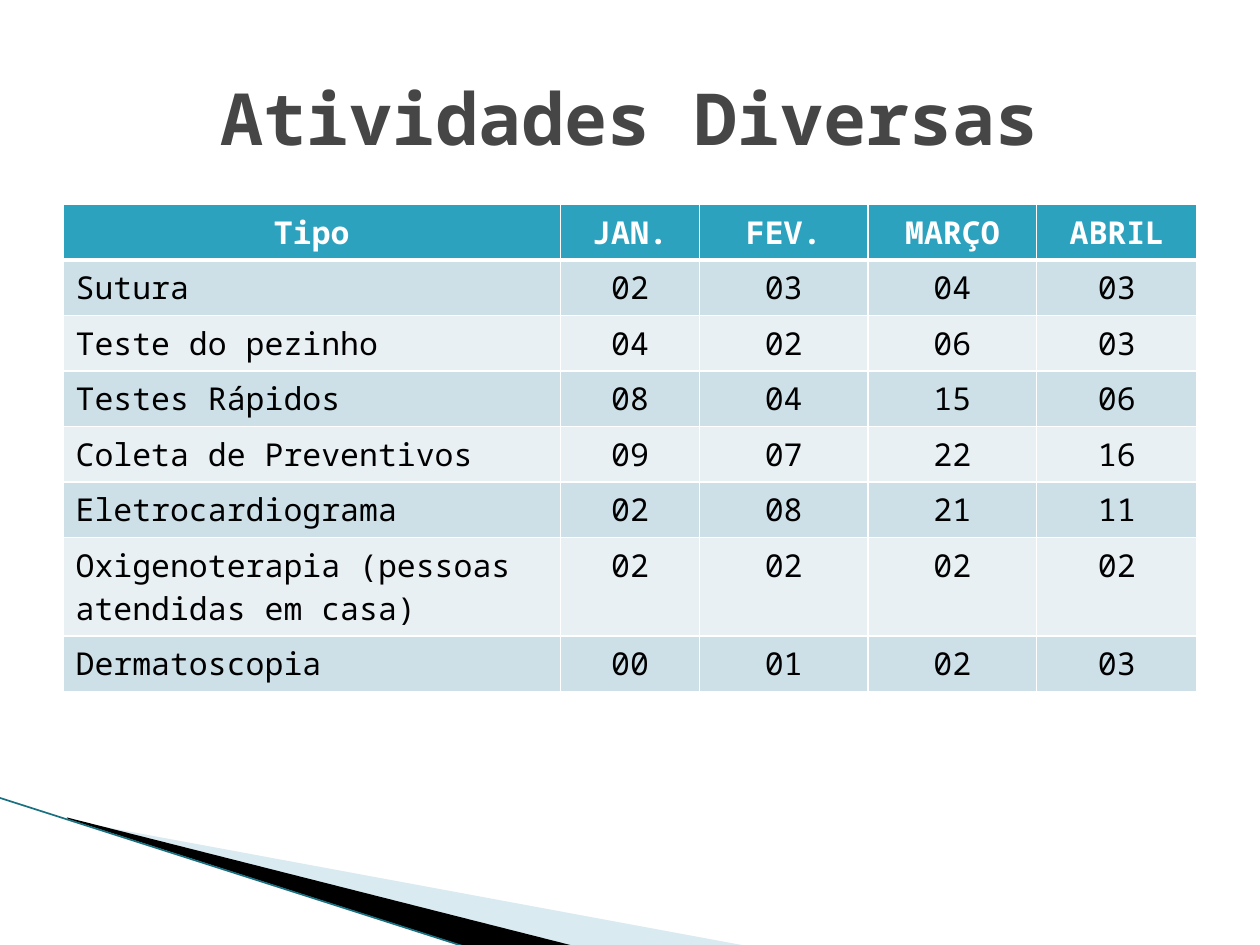
from dataclasses import dataclass

from lxml import etree
from pptx import Presentation
from pptx.dml.color import RGBColor
from pptx.enum.shapes import MSO_CONNECTOR
from pptx.enum.text import MSO_ANCHOR, MSO_AUTO_SIZE, PP_ALIGN
from pptx.oxml.ns import qn
from pptx.util import Cm, Pt

LINE = MSO_CONNECTOR.STRAIGHT
MIDDLE = MSO_ANCHOR.MIDDLE
FIXED = MSO_AUTO_SIZE.NONE
LEFT, CENTER = PP_ALIGN.LEFT, PP_ALIGN.CENTER


@dataclass(frozen=True)
class Theme:
    font: str = "Noto Sans Mono"
    title: str = "464646"
    head: str = "2DA2BF"
    bands: tuple = ("CDE0E8", "E8F0F4")
    white: str = "FFFFFF"
    black: str = "000000"
    pale: str = "A0CBDC"
    teal: str = "187080"
    big: int = 41
    small: int = 18


THEME = Theme()

COLS = (10.03, 2.8, 3.4, 3.4, 3.23)
ROWS = (
    ("Tipo", "JAN.", "FEV.", "MARÇO", "ABRIL"),
    ("Sutura", "02", "03", "04", "03"),
    ("Teste do pezinho", "04", "02", "06", "03"),
    ("Testes Rápidos", "08", "04", "15", "06"),
    ("Coleta de Preventivos", "09", "07", "22", "16"),
    ("Eletrocardiograma", "02", "08", "21", "11"),
    ("Oxigenoterapia (pessoas atendidas em casa)", "02", "02", "02", "02"),
    ("Dermatoscopia", "00", "01", "02", "03"),
)
PALE_WEDGE = ((1.4, 16.54), (15.11, 19.08), (11.58, 19.08), (1.4, 16.51))
DARK_WEDGE = ((1.35, 16.48), (11.61, 19.08), (9.45, 19.1), (1.37, 16.51))


def style(para, align, size, color, bold):
    para.alignment = align
    look = {"name": THEME.font, "size": Pt(size), "bold": bold}
    for key, value in look.items():
        setattr(para.font, key, value)
    para.font.color.rgb = RGBColor.from_string(color)


def add_wedge(slide, points, color, alpha=None):
    spots = [(Cm(x), Cm(y)) for x, y in points]
    pen = slide.shapes.build_freeform(*spots[0])
    pen.add_line_segments(spots[1:], close=True)
    shape = pen.convert_to_shape()
    shape.shadow.inherit = False
    shape.line.fill.background()
    shape.fill.solid()
    shape.fill.fore_color.rgb = RGBColor.from_string(color)
    if alpha:
        tint = shape._element.spPr.find(".//" + qn("a:srgbClr"))
        etree.SubElement(tint, qn("a:alpha"), val=str(alpha * 1000))


def add_line(slide, start, end, color, width):
    ends = [Cm(n) for n in (*start, *end)]
    line = slide.shapes.add_connector(LINE, *ends)
    line.line.color.rgb = RGBColor.from_string(color)
    line.line.width = Pt(width)
    etree.SubElement(line._element.spPr, qn("a:effectLst"))


def set_title(slide, text):
    title = slide.shapes.title
    box = {"left": 1.27, "top": 0.76, "width": 22.86, "height": 3.18}
    for key, value in box.items():
        setattr(title, key, Cm(value))
    frame = title.text_frame
    frame.text = text
    frame.auto_size = FIXED
    frame.vertical_anchor = MIDDLE
    style(frame.paragraphs[0], CENTER, THEME.big, THEME.title, True)


def edge_cell(cell, widths):
    props = cell._tc.get_or_add_tcPr()
    for side, width in widths.items():
        edge = etree.SubElement(props, qn("a:ln" + side), w=str(Pt(width)))
        fill = etree.SubElement(edge, qn("a:solidFill"))
        etree.SubElement(fill, qn("a:srgbClr"), val=THEME.white)


def fill_cell(cell, text, row, col):
    head = row == 0
    # Borders come before the fill in the cell properties
    edge_cell(cell, {"L": 1, "R": 1, "T": 3 if row == 1 else 1,
                     "B": 3 if head else 1})
    cell.fill.solid()
    back = THEME.head if head else THEME.bands[(row - 1) % 2]
    cell.fill.fore_color.rgb = RGBColor.from_string(back)
    cell.text = text
    style(cell.text_frame.paragraphs[0], CENTER if head or col else LEFT,
          THEME.small, THEME.white if head else THEME.black, head)


def add_grid(slide):
    high = 1.03
    frame = slide.shapes.add_table(
        len(ROWS), len(COLS), Cm(1.27), Cm(4.12),
        Cm(sum(COLS)), Cm(high * len(ROWS)))
    table = frame.table
    table.horz_banding = False
    for col, width in zip(table.columns, COLS):
        col.width = Cm(width)
    for r, row in enumerate(ROWS):
        table.rows[r].height = Cm(high)
        for c, text in enumerate(row):
            fill_cell(table.cell(r, c), text, r, c)


def main():
    deck = Presentation()
    deck.slide_width, deck.slide_height = Cm(25.4), Cm(19.05)
    slide = deck.slides.add_slide(deck.slide_layouts[5])

    # Corner decoration
    add_wedge(slide, PALE_WEDGE, THEME.pale, 40)
    add_wedge(slide, DARK_WEDGE, THEME.black)
    add_line(slide, (-0.02, 16.08), (9.42, 19.1), THEME.teal, 0.95)

    # Title and monthly figures
    set_title(slide, "Atividades Diversas")
    add_grid(slide)

    deck.save("out.pptx")


if __name__ == "__main__":
    main()
